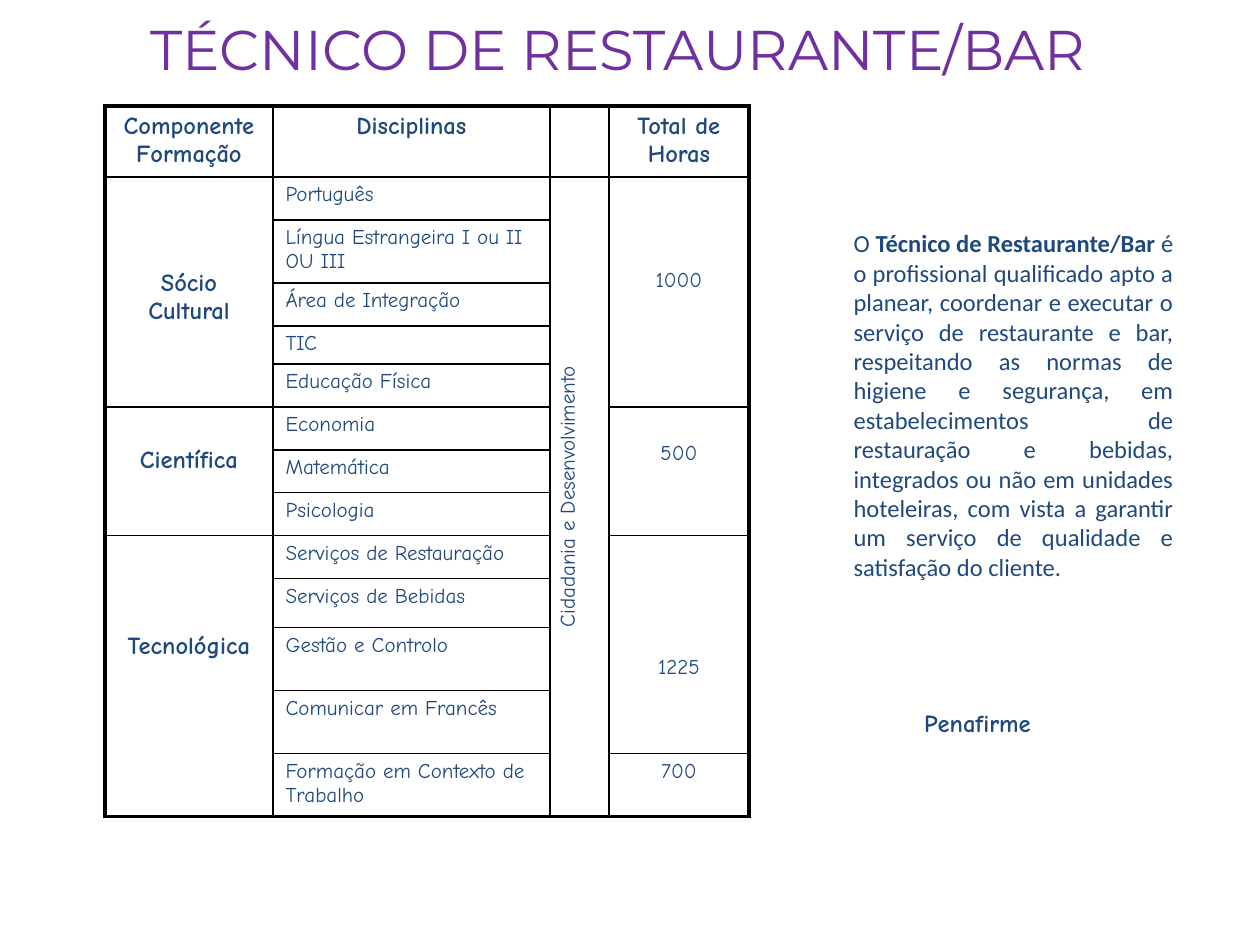
from lxml import etree
from pptx import Presentation
from pptx.dml.color import RGBColor
from pptx.enum.text import MSO_ANCHOR, MSO_AUTO_SIZE, PP_ALIGN
from pptx.oxml.ns import qn
from pptx.util import Pt

PX = 914400 // 126
LEFT, CENTER, JUSTIFY = PP_ALIGN.LEFT, PP_ALIGN.CENTER, PP_ALIGN.JUSTIFY
COLORS = {"title": "7030A0", "text": "1F497D", "border": "000000"}
HAND, SANS, HEADING = "Comic Neue", "Calibri", "Montserrat"

TITLE = "TÉCNICO DE RESTAURANTE/BAR"
HEADERS = ["Componente Formação", "Disciplinas", "", "Total de Horas"]
# Subject and row height
SUBJECTS = [
    ("Português", 43),
    ("Língua Estrangeira I ou II OU III", 63),
    ("Área de Integração", 43),
    ("TIC", 38),
    ("Educação Física", 43),
    ("Economia", 43),
    ("Matemática", 43),
    ("Psicologia", 43),
    ("Serviços de Restauração", 43),
    ("Serviços de Bebidas", 49),
    ("Gestão e Controlo", 63),
    ("Comunicar em Francês", 63),
    ("Formação em Contexto de Trabalho", 63),
]
# Text, rows spanned, space above the text
COMPONENTS = [("Sócio Cultural", 5, 92), ("Científica", 3, 40), ("Tecnológica", 5, 97)]
CITIZENSHIP = [("Cidadania e Desenvolvimento", 13, 6)]
HOURS = [("1000", 5, 92), ("500", 3, 35), ("1225", 4, 120), ("700", 1, 6)]
PROFILE = [
    ("O ", False),
    ("Técnico de Restaurante/Bar ", True),
    ("é o profissional qualificado apto a planear, coordenar e executar o serviço de "
     "restaurante e bar, respeitando as normas de higiene e segurança, em "
     "estabelecimentos de restauração e bebidas, integrados ou não em unidades "
     "hoteleiras, com vista a garantir um serviço de qualidade e satisfação do "
     "cliente.", False),
]
PLACE = "Penafirme"

HEADER_HEIGHT = 71
COLUMN_WIDTHS = [168, 277, 59, 140]
TABLE_LEFT, TABLE_TOP = 105, 106
THIN, THICK = 1, 2.25


def place(shape, left, top, width, height):
    shape.left, shape.top = left * PX, top * PX
    shape.width, shape.height = width * PX, height * PX


def style(paragraph, font, size, color, align, bold=False):
    paragraph.alignment = align
    paragraph.space_before = Pt(0)
    paragraph.font.name = font
    paragraph.font.size = Pt(size)
    paragraph.font.bold = bold
    paragraph.font.color.rgb = RGBColor.from_string(COLORS[color])


def write_cell(cell, text, size, align, bold=False, top=6):
    cell.margin_top = top * PX
    cell.text = text
    style(cell.text_frame.paragraphs[0], HAND, size, "text", align, bold)


def draw_borders(cell, widths):
    properties = cell._tc.get_or_add_tcPr()
    for side, width in widths.items():
        line = etree.SubElement(properties, qn("a:ln" + side), w=str(Pt(width)))
        fill = etree.SubElement(line, qn("a:solidFill"))
        etree.SubElement(fill, qn("a:srgbClr"), val=COLORS["border"])
    cell.fill.background()


def fill_column(table, column, groups, size, bold=False):
    """Write the groups down a column, merging the rows that each one spans."""
    row = 1
    for text, span, top in groups:
        cell = table.cell(row, column)
        if span > 1:
            cell.merge(table.cell(row + span - 1, column))
        write_cell(cell, text, size, CENTER, bold, top)
        row += span


def add_course_table(page):
    heights = [HEADER_HEIGHT] + [height for _, height in SUBJECTS]
    row_count, column_count = len(heights), len(COLUMN_WIDTHS)
    frame = page.shapes.add_table(
        row_count, column_count, TABLE_LEFT * PX, TABLE_TOP * PX,
        sum(COLUMN_WIDTHS) * PX, sum(heights) * PX)
    table = frame.table
    table.first_row = table.horz_banding = False
    for column, width in zip(table.columns, COLUMN_WIDTHS):
        column.width = width * PX
    for row, height in zip(table.rows, heights):
        row.height = height * PX

    for column, text in enumerate(HEADERS):
        write_cell(table.cell(0, column), text, 14, CENTER, True)
    for row, (subject, _) in enumerate(SUBJECTS, 1):
        write_cell(table.cell(row, 1), subject, 12, LEFT)
    fill_column(table, 0, COMPONENTS, 14, bold=True)
    fill_column(table, 2, CITIZENSHIP, 12)
    fill_column(table, 3, HOURS, 12)
    table.cell(1, 2)._tc.get_or_add_tcPr().set("vert", "vert270")

    for row in range(row_count):
        for column in range(column_count):
            cell = table.cell(row, column)
            if cell.is_spanned:
                continue
            last_row = row + cell.span_height == row_count
            draw_borders(cell, {
                "L": THICK if column == 0 else THIN,
                "R": THICK if column == column_count - 1 else THIN,
                "T": THICK if row == 0 else THIN,
                "B": THICK if last_row else THIN,
            })


def main():
    deck = Presentation()
    deck.slide_width, deck.slide_height = 1260 * PX, 945 * PX
    page = deck.slides.add_slide(deck.slide_layouts[1])

    title = page.shapes.title
    place(title, 25, 10, 1186, 76)
    title.text_frame.text = TITLE
    title.text_frame.word_wrap = False
    title.text_frame.auto_size = MSO_AUTO_SIZE.NONE
    title.text_frame.vertical_anchor = MSO_ANCHOR.MIDDLE
    style(title.text_frame.paragraphs[0], HEADING, 32, "title", CENTER)

    add_course_table(page)

    profile = page.placeholders[1]
    place(profile, 841, 222, 345, 370)
    profile.text_frame.auto_size = MSO_AUTO_SIZE.NONE
    paragraph = profile.text_frame.paragraphs[0]
    properties = paragraph._p.get_or_add_pPr()
    properties.set("marL", "0")
    properties.set("indent", "0")
    etree.SubElement(properties, qn("a:buNone"))
    style(paragraph, SANS, 14, "text", JUSTIFY)
    for text, bold in PROFILE:
        span = paragraph.add_run()
        span.text = text
        span.font.bold = bold

    box = page.shapes.add_textbox(0, 0, 0, 0)
    place(box, 841, 702, 273, 40)
    box.text_frame.word_wrap = True
    box.text_frame.text = PLACE
    style(box.text_frame.paragraphs[0], HAND, 14, "text", CENTER, True)

    deck.save("out.pptx")


if __name__ == "__main__":
    main()
